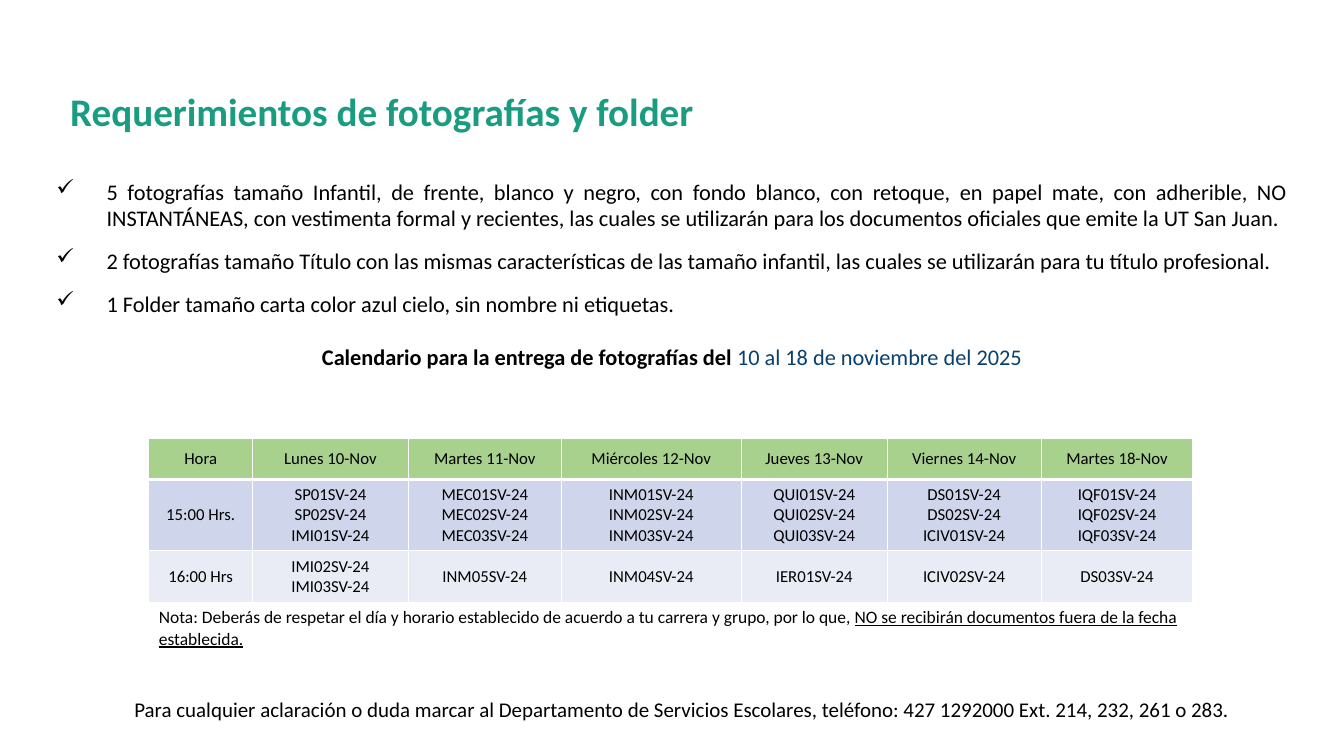
from lxml.etree import SubElement as Sub
from pptx import Presentation
from pptx.dml.color import RGBColor as Rgb
from pptx.enum.text import MSO_ANCHOR as Anchor, PP_ALIGN as Align
from pptx.oxml.ns import qn
from pptx.util import Pt

PX = 9144
BLACK, WHITE, TEAL, NAVY = "000000", "FFFFFF", "199C7F", "08406F"
FILLS = ["A9D18E", "CFD5EA", "E9EBF5"]
WIDTHS = [103, 155, 152, 179, 145, 153, 151]
HEIGHTS = [41, 71, 51, 49]
BASE = {"name": "Calibri", "size": Pt(16), "bold": False}
ITEMS = [
    "5 fotografías tamaño Infantil, de frente, blanco y negro, con fondo blanco, con retoque, "
    "en papel mate, con adherible, NO INSTANTÁNEAS, con vestimenta formal y recientes, las "
    "cuales se utilizarán para los documentos oficiales que emite la UT San Juan.",
    "2 fotografías tamaño Título con las mismas características de las tamaño infantil, "
    "las cuales se utilizarán para tu título profesional.",
    "1 Folder tamaño carta color azul cielo, sin nombre ni etiquetas.",
]
ROWS = [
    ["Hora", "Lunes 10-Nov", "Martes 11-Nov", "Miércoles 12-Nov",
     "Jueves 13-Nov", "Viernes 14-Nov", "Martes 18-Nov"],
    ["15:00 Hrs.", "SP01SV-24\nSP02SV-24\nIMI01SV-24", "MEC01SV-24\nMEC02SV-24\nMEC03SV-24",
     "INM01SV-24\nINM02SV-24\nINM03SV-24", "QUI01SV-24\nQUI02SV-24\nQUI03SV-24",
     "DS01SV-24\nDS02SV-24\nICIV01SV-24", "IQF01SV-24\nIQF02SV-24\nIQF03SV-24"],
    ["16:00 Hrs", "IMI02SV-24\nIMI03SV-24", "INM05SV-24", "INM04SV-24",
     "IER01SV-24", "ICIV02SV-24", "DS03SV-24"],
]


def color(code):
    """Turn a hex string into a colour."""
    return Rgb.from_string(code)


def put(obj, form):
    """Set each value of a format dict on an object."""
    for key, val in form.items():
        setattr(obj, key, val)


def add_run(para, text, code=BLACK, **form):
    """Add a run with the base font and any changes."""
    run = para.add_run()
    run.text = text
    put(run.font, BASE | form)
    run.font.color.rgb = color(code)


def add_box(slide, left, top, width, height, **form):
    """Add a wrapped text box and return its frame."""
    box = slide.shapes.add_textbox(left * PX, top * PX, width * PX, height * PX)
    put(box.text_frame, {"word_wrap": True} | form)
    return box.text_frame


def add_check(para):
    """Give a paragraph a hanging check mark."""
    props = para._p.get_or_add_pPr()
    put_at = {"marL": 50 * PX, "indent": -50 * PX}
    for key, val in put_at.items():
        props.set(key, str(val))
    Sub(props, qn("a:buChar")).set("char", "✓")


def add_edges(cell, low):
    """Draw white borders, with the lower one of a given weight."""
    props = cell._tc.get_or_add_tcPr()
    for side, size in zip("LRTB", (1, 1, 1, low)):
        line = Sub(props, qn(f"a:ln{side}"), w=str(Pt(size)))
        fill = Sub(line, qn("a:solidFill"))
        Sub(fill, qn("a:srgbClr"), val=WHITE)


def add_list(slide):
    """Add the checked items and the heading of the calendar."""
    frame = add_box(slide, 40, 172, 1256, 533, margin_left=16 * PX, margin_right=16 * PX)
    para = frame.paragraphs[0]
    for i, item in enumerate(ITEMS):
        if i:
            para = frame.add_paragraph()
            para.space_before = Pt(11.3)
        add_check(para)
        para.alignment = Align.JUSTIFY
        add_run(para, item)
    para = frame.add_paragraph()
    put(para, {"alignment": Align.CENTER, "space_before": Pt(19.1)})
    add_run(para, "Calendario para la entrega de fotografías del ", bold=True)
    add_run(para, "10 al 18 de noviembre del 2025", NAVY)


def add_grid(slide):
    """Add the calendar table with its note."""
    grid = slide.shapes.add_table(
        len(HEIGHTS), len(WIDTHS), 148 * PX, 436 * PX,
        sum(WIDTHS) * PX, sum(HEIGHTS) * PX).table
    for col, width in zip(grid.columns, WIDTHS):
        col.width = width * PX
    for row, height in zip(grid.rows, HEIGHTS):
        row.height = height * PX
    for r, (texts, code) in enumerate(zip(ROWS, FILLS)):
        for c, text in enumerate(texts):
            cell = grid.cell(r, c)
            add_edges(cell, 1 if r else 3)
            cell.fill.solid()
            cell.fill.fore_color.rgb = color(code)
            cell.vertical_anchor = Anchor.MIDDLE
            frame = cell.text_frame
            for i, line in enumerate(text.split("\n")):
                para = frame.add_paragraph() if i else frame.paragraphs[0]
                para.alignment = Align.CENTER
                add_run(para, line, size=Pt(12))
    note = grid.cell(3, 0)
    note.merge(grid.cell(3, len(WIDTHS) - 1))
    add_edges(note, 1)
    note.fill.background()
    para = note.text_frame.paragraphs[0]
    add_run(para, "Nota: Deberás de respetar el día y horario establecido de acuerdo a tu "
            "carrera y grupo, por lo que, ", size=Pt(12.5))
    add_run(para, "NO se recibirán documentos fuera de la fecha establecida.",
            size=Pt(12.5), underline=True)


def main():
    """Build the slide and save it."""
    deck = Presentation()
    put(deck, {"slide_width": 1336 * PX, "slide_height": 750 * PX})
    slide = deck.slides.add_slide(deck.slide_layouts[6])
    add_list(slide)
    add_grid(slide)
    title = add_box(slide, 60, 67, 1217, 93, vertical_anchor=Anchor.MIDDLE).paragraphs[0]
    title.line_spacing = 0.9
    add_run(title, "Requerimientos de fotografías y folder", TEAL, size=Pt(28), bold=True)
    foot = add_box(slide, 60, 688, 1236, 35).paragraphs[0]
    foot.alignment = Align.CENTER
    add_run(foot, "Para cualquier aclaración o duda marcar al Departamento de Servicios "
            "Escolares, teléfono: 427 1292000 Ext. 214, 232, 261 o 283.", size=Pt(15))
    deck.save("out.pptx")


if __name__ == "__main__":
    main()
